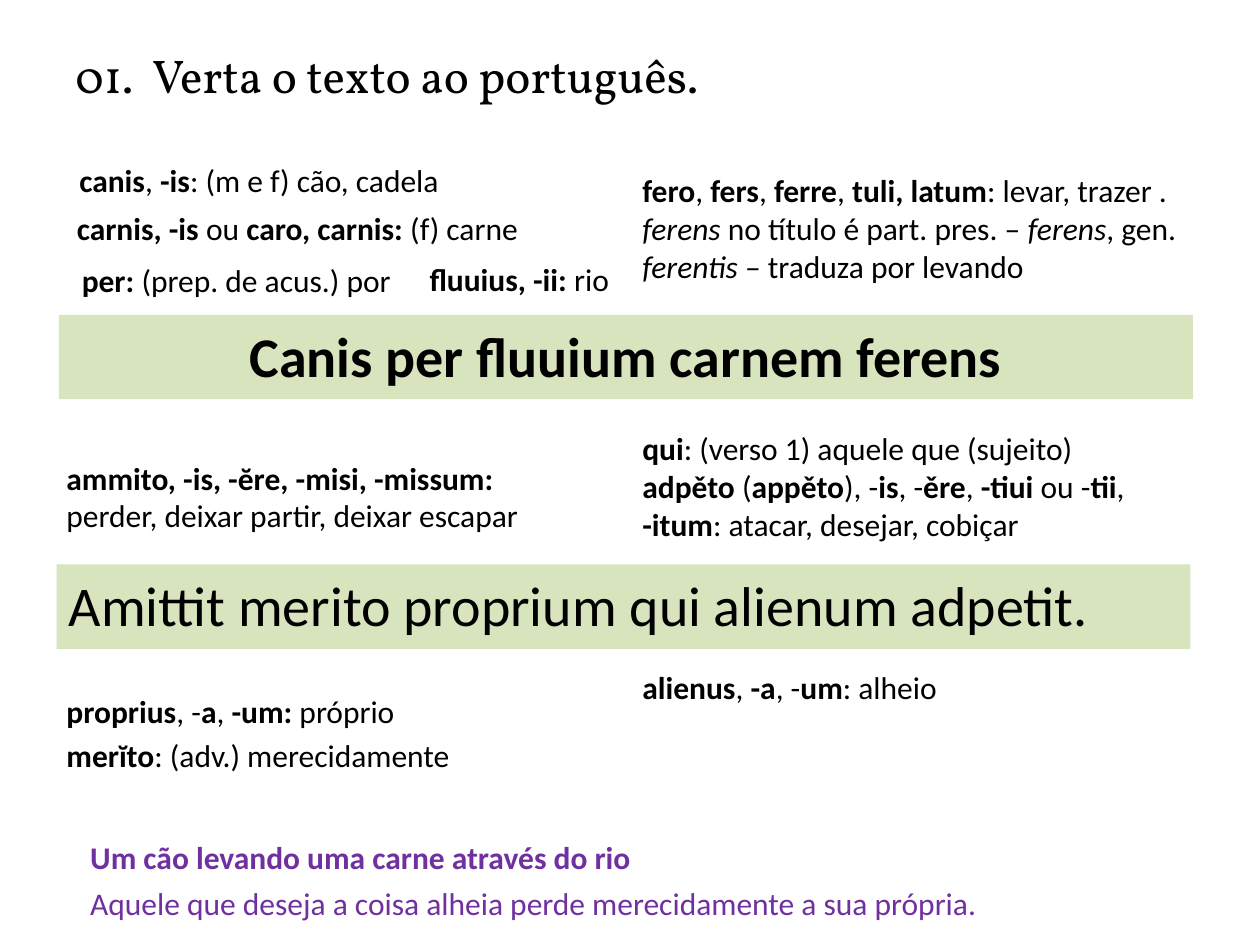
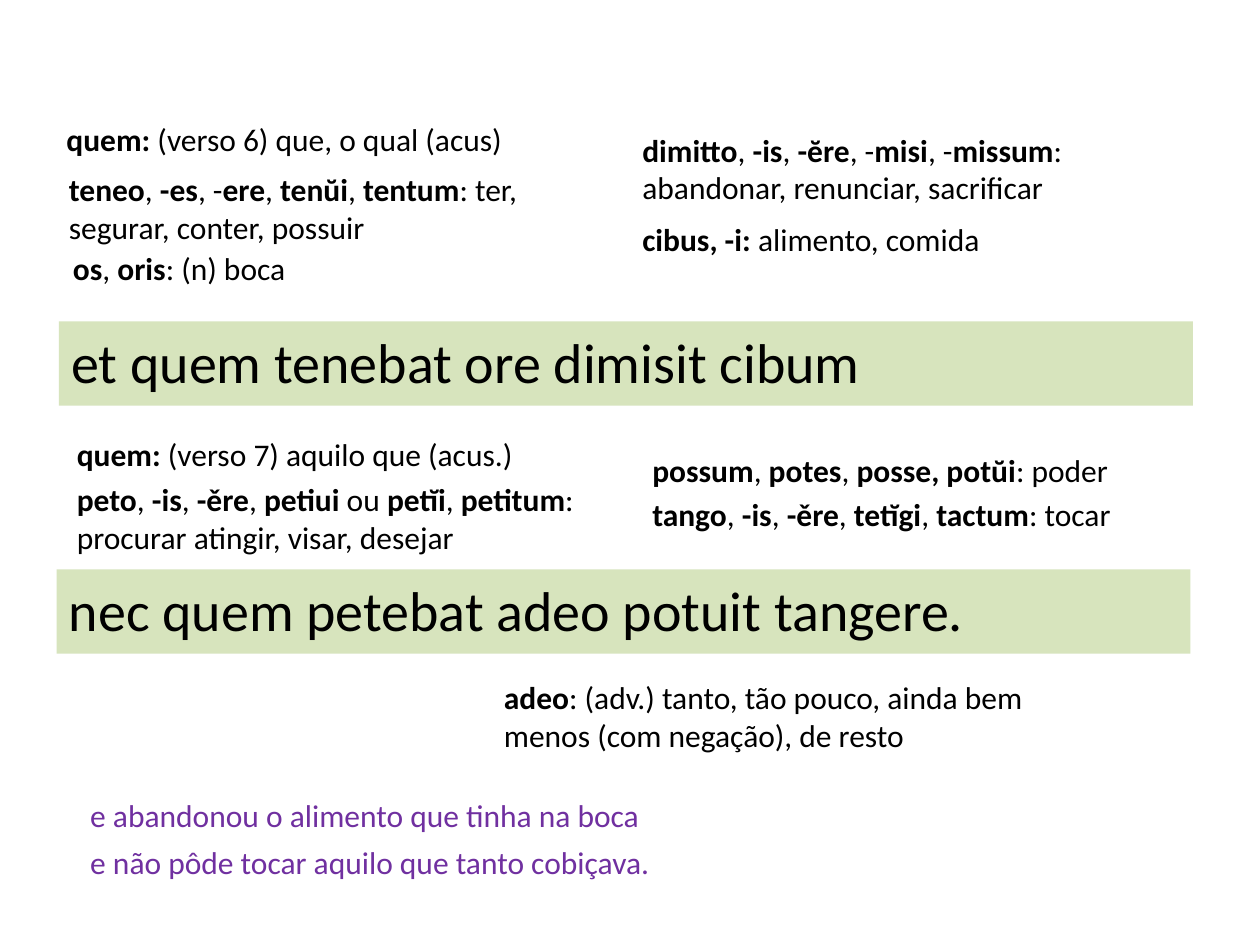
"""Build two Latin vocabulary slides with glosses, verse bands and translations."""
from pptx import Presentation
from pptx.dml.color import RGBColor
from pptx.enum.shapes import MSO_SHAPE
from pptx.enum.text import MSO_ANCHOR, MSO_AUTO_SIZE, PP_ALIGN
from pptx.util import Cm, Pt

RECTANGLE = MSO_SHAPE.RECTANGLE
TOP, MIDDLE = MSO_ANCHOR.TOP, MSO_ANCHOR.MIDDLE
GROW = MSO_AUTO_SIZE.SHAPE_TO_FIT_TEXT
LEFT, CENTER = PP_ALIGN.LEFT, PP_ALIGN.CENTER

BLACK = RGBColor(0x00, 0x00, 0x00)
PURPLE = RGBColor(0x70, 0x30, 0xA0)
PALE_GREEN = RGBColor(0xD7, 0xE4, 0xBD)

GLOSS_FONT = {"name": "Calibri", "size": Pt(18)}
VERSE_FONT = {"name": "Calibri", "size": Pt(32)}
TITLE_FONT = {"name": "Vollkorn", "size": Pt(27)}

BAND_LEFTS = (1.19, 1.14)
TRANSLATION_STEP = 0.94

SLIDES = [
    {
        "title": "01. \tVerta o texto ao português.",
        "verses": [
            (6.35, "*Canis per fluuium carnem ferens*", CENTER),
            (11.38, "Amittit merito proprium qui alienum adpetit.", LEFT),
        ],
        "translation_top": 16.76,
        "translations": [
            "*Um cão levando uma carne através do rio*",
            "Aquele que deseja a coisa alheia perde merecidamente a sua própria.",
        ],
        "glosses": [
            (12.7, 3.33, 11.71, 3,
             "*fero*, *fers*, *ferre*, *tuli, latum*: levar, trazer . _ferens_ no título "
             "é part. pres. – _ferens_, gen. _ferentis _– traduza por levando"),
            (1.35, 3.12, 8.56, 1, "*canis*, *-is*: (m e f) cão, cadela"),
            (1.3, 4.09, 9.8, 1, "*carnis, -is *ou *caro, carnis: *(f) carne"),
            (8.41, 5.11, 4.5, 1, "*fluuius, -ii: *rio"),
            (1.4, 5.13, 7.49, 1, "*per: *(prep. de acus.) por"),
            (1.09, 9.12, 9.7, 2,
             "*ammito, -is, -ĕre, -misi, -missum:* perder, deixar partir, deixar escapar"),
            (12.7, 8.53, 9.7, 1, "*qui*: (verso 1) aquele que (sujeito)"),
            (12.7, 9.3, 11.3, 2,
             "*adpěto* (*appěto*), -*is*, -*ěre*, *-tiui* ou -*tii*, *-itum*: "
             "atacar, desejar, cobiçar"),
            (12.7, 13.34, 9.7, 1, "*alienus*, *-a*, -*um*: alheio"),
            (1.09, 13.82, 9.7, 1, "*proprius*, -*a*, *-um:* próprio"),
            (1.09, 14.71, 9.7, 1, "*merĭto*: (adv.) merecidamente"),
        ],
    },
    {
        "verses": [
            (6.48, "et quem tenebat ore dimisit cibum", LEFT),
            (11.48, "nec quem petebat adeo potuit tangere.", LEFT),
        ],
        "translation_top": 15.93,
        "translations": [
            "e abandonou o alimento que tinha na boca",
            "e não pôde tocar aquilo que tanto cobiçava.",
        ],
        "glosses": [
            (12.7, 2.51, 11.33, 2,
             "*dimitto*, *-is*, *-ĕre*, -*misi*, -*missum*: abandonar, renunciar, sacrificar"),
            (12.7, 4.32, 11.33, 1, "*cibus, -i:* alimento, comida"),
            (1.14, 3.3, 11.28, 2,
             "*teneo*, *-es*, -*ere*, *tenŭi*, *tentum*: ter, segurar, conter, possuir"),
            (1.09, 2.29, 11.28, 1, "*quem:* (verso 6) que, o qual (acus)"),
            (1.22, 4.9, 11.28, 1, "*os*, *oris*: (n) boca"),
            (12.9, 8.97, 11.33, 1, "*possum*, *potes*, *posse, potŭi*: poder"),
            (12.9, 9.86, 11.33, 1, "*tango*, *-is*, *-ěre*, *tetĭgi*, *tactum*: tocar"),
            (1.3, 8.64, 11.33, 1, "*quem: *(verso 7) aquilo que (acus.)"),
            (1.3, 9.55, 11.33, 2,
             "*peto*, *-is*, *-ěre*, *petiui* ou *petĭi*, *petitum*: "
             "procurar atingir, visar, desejar"),
            (9.91, 13.54, 11.33, 2,
             "*adeo*: (adv.) tanto, tão pouco, ainda bem menos (com negação), de resto"),
        ],
    },
]


def set_values(target, values):
    """Set each named attribute of the target."""
    for name, value in values.items():
        setattr(target, name, value)


class LessonDeck:
    """Holds the shared style and the current slide."""

    def __init__(self):
        """Start an empty 4:3 presentation."""
        self.presentation = Presentation()
        set_values(self.presentation, {"slide_width": Cm(25.4), "slide_height": Cm(19.05)})
        self.slide = None

    def new_slide(self):
        """Add a blank slide and make it current."""
        self.slide = self.presentation.slides.add_slide(self.presentation.slide_layouts[6])

    def fill_text(self, shape, text, font, color=BLACK, alignment=LEFT, **frame_values):
        """Fill a shape with text where *...* is bold and _..._ is italic."""
        set_values(shape.text_frame, {"word_wrap": True, "vertical_anchor": TOP, **frame_values})
        paragraph = shape.text_frame.paragraphs[0]
        paragraph.alignment = alignment
        for bold_index, part in enumerate(text.split("*")):
            for italic_index, piece in enumerate(part.split("_")):
                if piece:
                    run = paragraph.add_run()
                    run.text = piece
                    set_values(run.font, {**font, "bold": bold_index % 2 == 1,
                                          "italic": italic_index % 2 == 1})
                    run.font.color.rgb = color
        return paragraph

    def title(self, text):
        """Add the numbered exercise title with a hanging number."""
        shape = self.slide.shapes.add_textbox(Cm(1.27), Cm(0.2), Cm(22.86), Cm(2.59))
        paragraph = self.fill_text(shape, text, TITLE_FONT, vertical_anchor=MIDDLE)
        properties = paragraph._p.get_or_add_pPr()
        properties.set("marL", str(Cm(1.55)))
        properties.set("indent", str(-Cm(1.55)))

    def verse(self, left, top, text, alignment):
        """Add a green band holding one verse."""
        shape = self.slide.shapes.add_shape(RECTANGLE, Cm(left), Cm(top), Cm(22.86), Cm(1.7))
        shape.shadow.inherit = False
        shape.fill.solid()
        shape.fill.fore_color.rgb = PALE_GREEN
        shape.line.fill.background()
        self.fill_text(shape, text, VERSE_FONT, alignment=alignment)

    def gloss(self, left, top, width, lines, text, color=BLACK):
        """Add a small text box as high as its lines need."""
        height = Cm(0.25 + 0.78 * lines)
        shape = self.slide.shapes.add_textbox(Cm(left), Cm(top), Cm(width), height)
        self.fill_text(shape, text, GLOSS_FONT, color, auto_size=GROW)

    def lesson(self, content):
        """Build one slide from its content."""
        self.new_slide()
        for left, (top, text, alignment) in zip(BAND_LEFTS, content["verses"]):
            self.verse(left, top, text, alignment)
        for index, text in enumerate(content["translations"]):
            top = content["translation_top"] + index * TRANSLATION_STEP
            self.gloss(1.57, top, 22.81, 1, text, PURPLE)
        if "title" in content:
            self.title(content["title"])
        for gloss in content["glosses"]:
            self.gloss(*gloss)


def main():
    """Build and save the slides."""
    deck = LessonDeck()
    for content in SLIDES:
        deck.lesson(content)
    deck.presentation.save("out.pptx")


if __name__ == "__main__":
    main()
